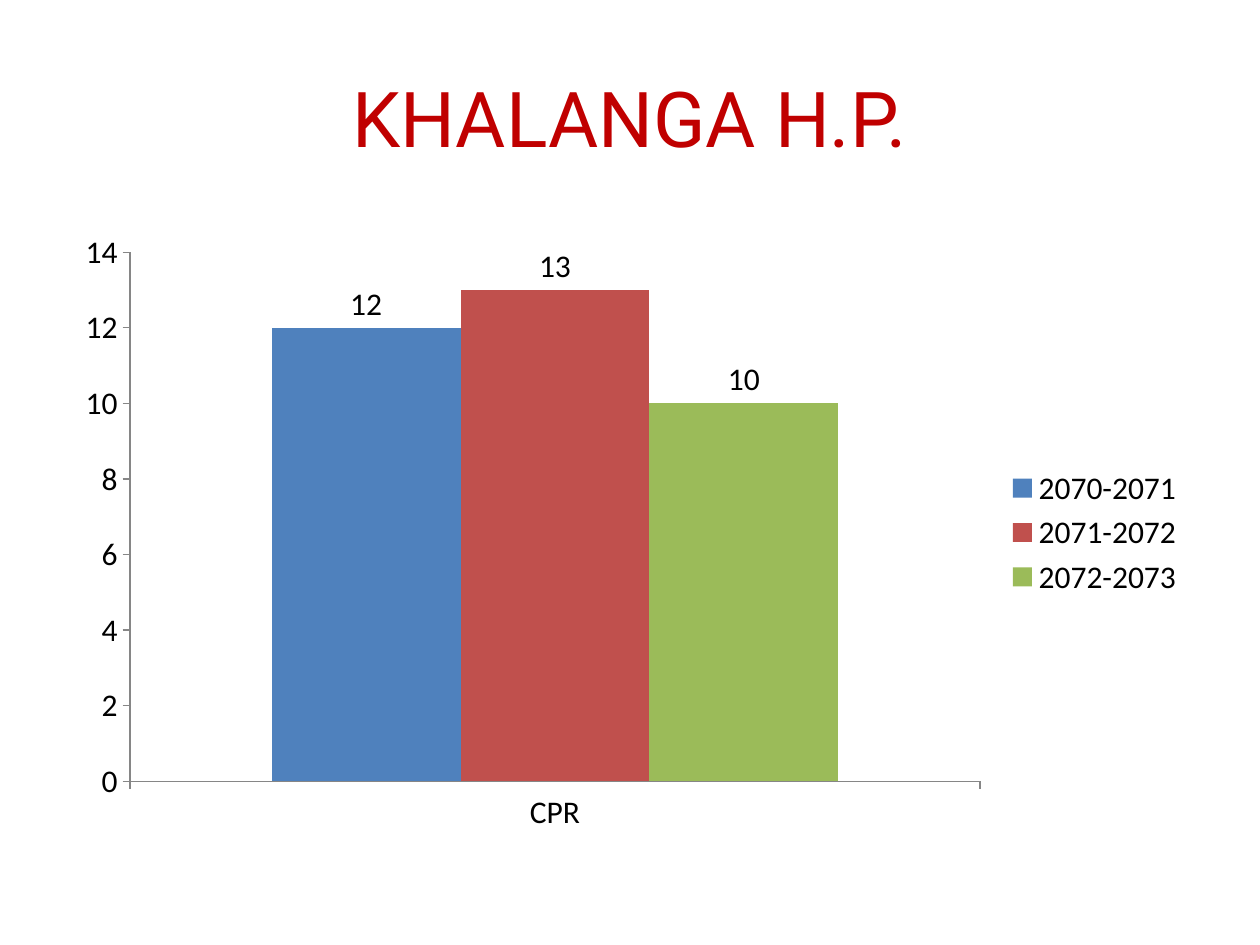
"""Build a slide with a yearly CPR column chart for Khalanga H.P."""
from pptx import Presentation
from pptx.chart.data import CategoryChartData
from pptx.dml.color import RGBColor
from pptx.enum.chart import XL_CHART_TYPE, XL_LABEL_POSITION, XL_LEGEND_POSITION, XL_TICK_MARK
from pptx.enum.text import MSO_ANCHOR, PP_ALIGN
from pptx.util import Cm, Pt

COLUMNS = XL_CHART_TYPE.COLUMN_CLUSTERED
OUTSIDE_END = XL_LABEL_POSITION.OUTSIDE_END
RIGHT = XL_LEGEND_POSITION.RIGHT
OUTSIDE = XL_TICK_MARK.OUTSIDE
MIDDLE = MSO_ANCHOR.MIDDLE
CENTER = PP_ALIGN.CENTER

TITLE = "KHALANGA H.P."
CATEGORIES = ["CPR"]
SERIES = [
    ("2070-2071", [12], "blue"),
    ("2071-2072", [13], "red"),
    ("2072-2073", [10], "green"),
]
COLORS = {
    "title": "C00000",
    "text": "000000",
    "axis": "868686",
    "blue": "4F81BD",
    "red": "C0504D",
    "green": "9BBB59",
}
MARGIN, CONTENT_WIDTH = Cm(1.27), Cm(22.86)


def color(name):
    return RGBColor.from_string(COLORS[name])


def style_font(font, name, size, color_name):
    font.name = name
    font.size = Pt(size)
    font.color.rgb = color(color_name)


def add_title(slide):
    title = slide.shapes.add_textbox(MARGIN, Cm(0.76), CONTENT_WIDTH, Cm(3.18))
    frame = title.text_frame
    frame.word_wrap = True
    frame.vertical_anchor = MIDDLE
    paragraph = frame.paragraphs[0]
    paragraph.text = TITLE
    paragraph.alignment = CENTER
    style_font(paragraph.font, "Roboto", 44, "title")


def add_cpr_chart(slide):
    data = CategoryChartData()
    data.categories = CATEGORIES
    for name, values, _ in SERIES:
        data.add_series(name, values)
    chart = slide.shapes.add_chart(
        COLUMNS, MARGIN, Cm(4.45), CONTENT_WIDTH, Cm(12.57), data
    ).chart
    style_font(chart.font, "Calibri", 18, "text")
    chart.has_title = False
    chart.has_legend = True
    chart.legend.position = RIGHT
    chart.legend.include_in_layout = False

    for axis in (chart.category_axis, chart.value_axis):
        axis.has_major_gridlines = False
        axis.major_tick_mark = OUTSIDE
        axis.format.line.color.rgb = color("axis")
        axis.format.line.width = Pt(0.75)
    chart.value_axis.minimum_scale = 0
    chart.value_axis.maximum_scale = 14
    chart.value_axis.major_unit = 2

    plot = chart.plots[0]
    plot.vary_by_categories = False
    plot.gap_width = 150
    plot.overlap = 0
    for series, (_, _, color_name) in zip(plot.series, SERIES):
        series.format.fill.solid()
        series.format.fill.fore_color.rgb = color(color_name)
        series.data_labels.show_value = True
        series.data_labels.position = OUTSIDE_END


def main():
    presentation = Presentation()
    presentation.slide_width = Cm(25.4)
    presentation.slide_height = Cm(19.05)
    slide = presentation.slides.add_slide(presentation.slide_layouts[6])
    add_title(slide)
    add_cpr_chart(slide)
    presentation.save("out.pptx")


if __name__ == "__main__":
    main()
